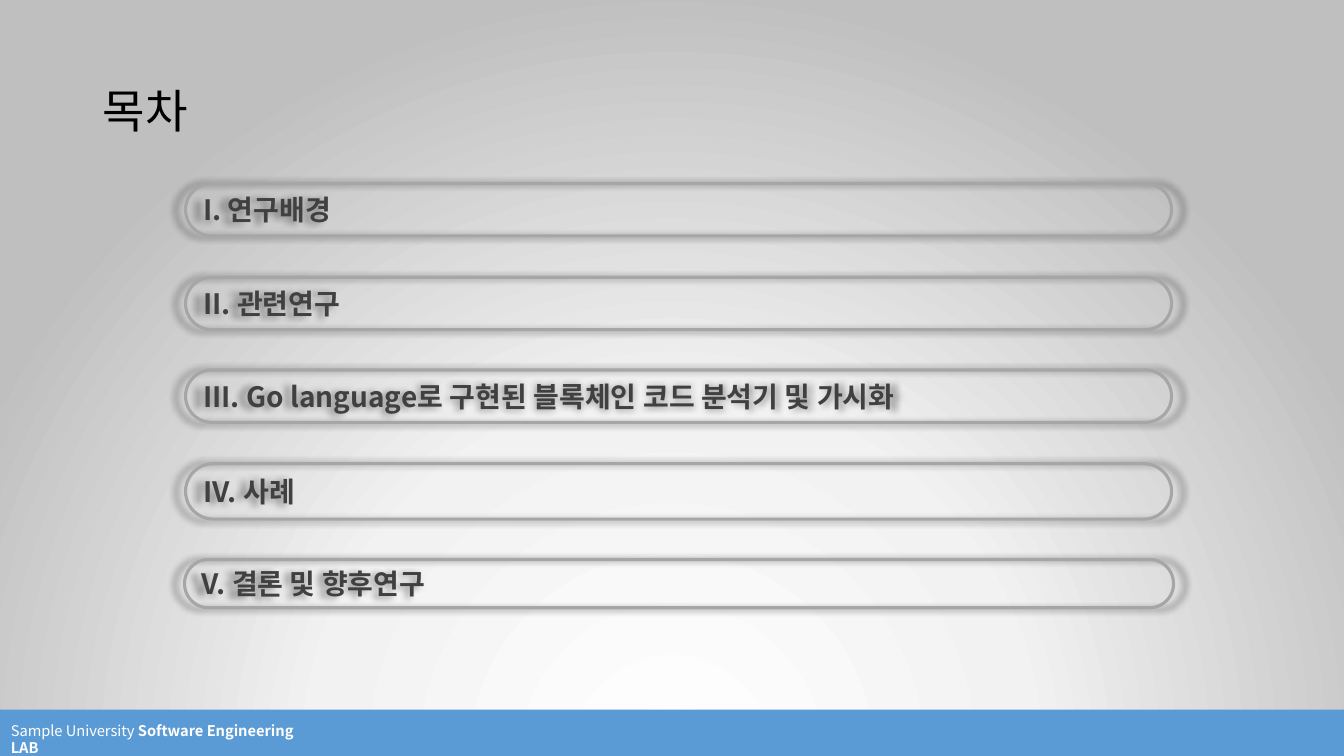
"""Builds the table-of-contents slide with five rounded section bars."""
from lxml import etree
from pptx import Presentation
from pptx.dml.color import RGBColor
from pptx.enum.shapes import MSO_SHAPE as Shape
from pptx.enum.text import MSO_ANCHOR as Anchor, PP_ALIGN as Align
from pptx.oxml import parse_xml
from pptx.oxml.ns import nsdecls, qn
from pptx.util import Inches, Pt

FONT = "Noto Sans CJK KR"


def color(hex_value):
    return RGBColor.from_string(hex_value)


def add_run(paragraph, text, size, hex_value, bold=False):
    run = paragraph.add_run()
    run.text = text
    run.font.size = Pt(size)
    run.font.bold = bold
    run.font.color.rgb = color(hex_value)
    run.font.name = FONT
    etree.SubElement(run.font._element, qn("a:ea")).set("typeface", FONT)


deck = Presentation()
deck.slide_width = Inches(13.33)
deck.slide_height = Inches(7.5)
slide = deck.slides.add_slide(deck.slide_layouts[5])

background = slide.background.fill
background.gradient()
stops = "".join(
    f'<a:gs pos="{position * 1000}"><a:srgbClr val="{shade}"/></a:gs>'
    for position, shade in [(0, "FFFFFF"), (46, "F2F2F2"), (100, "BFBFBF")]
)
glow = parse_xml(
    f'<a:gradFill {nsdecls("a")} rotWithShape="1"><a:gsLst>{stops}</a:gsLst>'
    '<a:path path="circle"><a:fillToRect l="50000" t="130000" r="50000" b="-30000"/>'
    "</a:path></a:gradFill>"
)
flat_gradient = slide.background._cSld.find(".//" + qn("a:gradFill"))
flat_gradient.getparent().replace(flat_gradient, glow)

footer_band = slide.shapes.add_shape(
    Shape.RECTANGLE, Inches(0), Inches(7.04), Inches(13.33), Inches(0.46))
footer_band.shadow.inherit = False
footer_band.fill.solid()
footer_band.fill.fore_color.rgb = color("5B9BD5")
footer_band.line.fill.background()

lab_name = slide.shapes.add_textbox(Inches(0.01), Inches(7.11), Inches(3.27), Inches(0.28))
lab_name.text_frame.word_wrap = True
lab_line = lab_name.text_frame.paragraphs[0]
add_run(lab_line, "Sample University ", 10.5, "FFFFFF")
add_run(lab_line, "Software Engineering LAB", 10.5, "FFFFFF", bold=True)

title = slide.shapes.title
title.left, title.top = Inches(0.92), Inches(0.4)
title.width, title.height = Inches(11.5), Inches(1.45)
title.text_frame.vertical_anchor = Anchor.MIDDLE
heading = title.text_frame.paragraphs[0]
heading.alignment = Align.LEFT
heading.line_spacing = 0.9
add_run(heading, "목차", 33, "000000")

sections = [
    ("I. 연구배경", 1.84, 1.82, 9.78, 0.52),
    ("II. 관련연구", 1.84, 2.75, 9.78, 0.52),
    ("III. Go language로 구현된 블록체인 코드 분석기 및 가시화", 1.84, 3.67, 9.78, 0.52),
    ("IV. 사례", 1.84, 4.6, 9.78, 0.55),
    ("V. 결론 및 향후연구", 1.83, 5.55, 9.81, 0.48),
]
for section, left, top, width, height in sections:
    bar = slide.shapes.add_shape(
        Shape.ROUNDED_RECTANGLE, Inches(left), Inches(top), Inches(width), Inches(height))
    bar.adjustments[0] = 0.5
    bar.fill.background()
    bar.line.color.rgb = color("A6A6A6")
    bar.line.width = Pt(2.25)
    bar.shadow.inherit = False
    bar._element.spPr.find(qn("a:effectLst")).append(parse_xml(
        f'<a:outerShdw {nsdecls("a")} blurRad="{Pt(5)}" sx="102000" sy="102000" '
        'algn="ctr" rotWithShape="0"><a:srgbClr val="000000"><a:alpha val="40000"/>'
        "</a:srgbClr></a:outerShdw>"))
    bar.text_frame.word_wrap = False
    bar.text_frame.vertical_anchor = Anchor.MIDDLE
    entry = bar.text_frame.paragraphs[0]
    entry.alignment = Align.LEFT
    add_run(entry, section, 20, "404040", bold=True)

deck.save("out.pptx")
